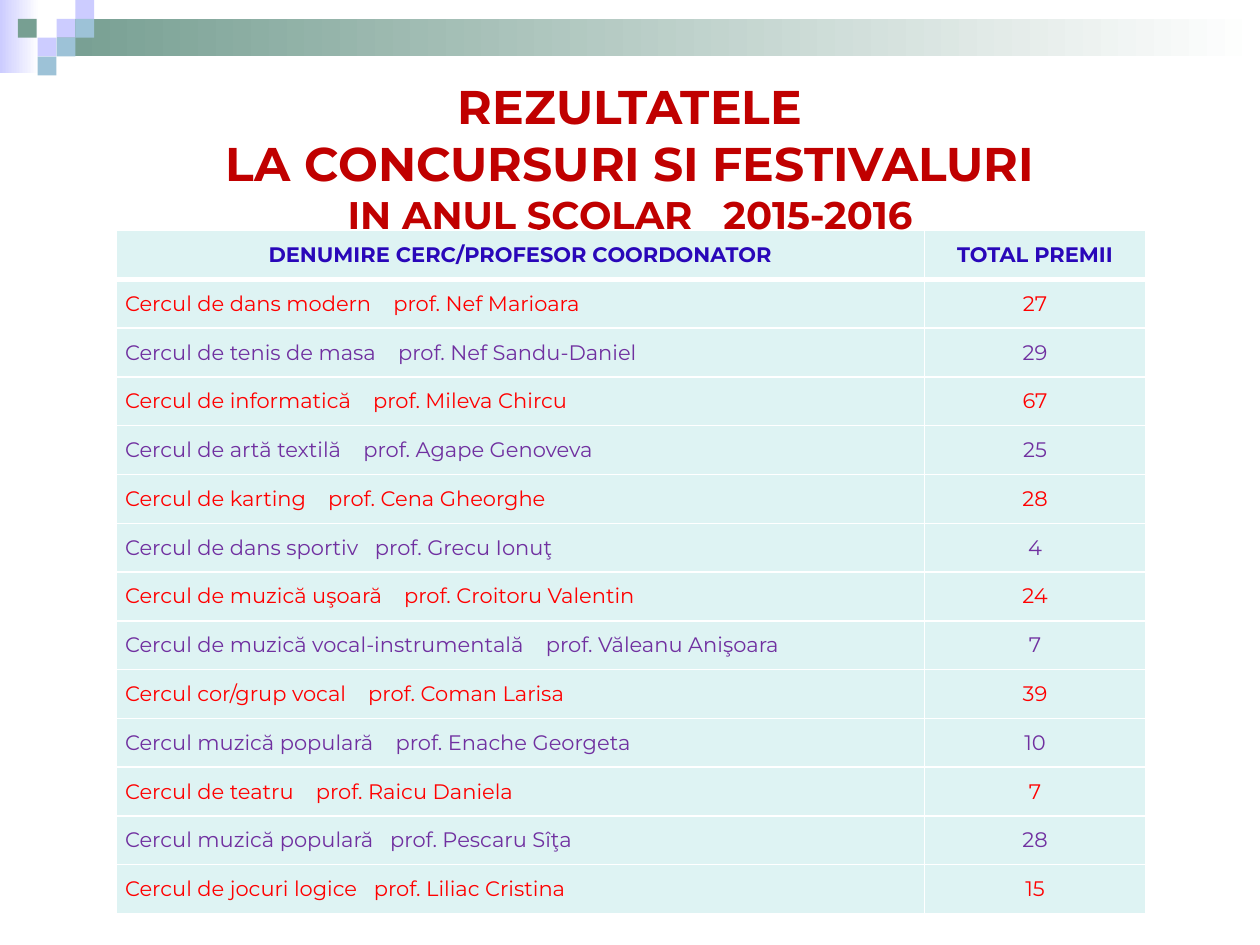
from lxml.etree import SubElement
from pptx import Presentation
from pptx.dml.color import RGBColor
from pptx.enum.shapes import MSO_SHAPE as Shape
from pptx.enum.text import MSO_ANCHOR as Anchor, PP_ALIGN as Align
from pptx.oxml import parse_xml
from pptx.oxml.ns import nsdecls, qn
from pptx.util import Cm, Pt

FONT = "Montserrat"
COLORS = {
    "white": "FFFFFF", "lilac": "CCCCFF", "green": "779F92", "blue": "9DC2D7",
    "title": "C00000", "header": "2907B9", "odd": "FF0000", "even": "7030A0",
    "cell": "DEF3F3",
}
UNIT = 0.38  # side of a corner square, cm
SPACE = 0.26  # width of a space, em
SQUARES = [  # column, row, colour
    (3, 1, "lilac"), (4, 0, "lilac"), (4, 1, "blue"), (2, 2, "lilac"),
    (0.95, 1, "green"), (3, 2, "blue"), (2, 3, "blue"),
]
TITLE = [  # pieces of a line, size
    (["REZULTATELE"], 27),
    (["LA CONCURSURI SI FESTIVALURI"], 27),
    (["IN ANUL ŞCOLAR", "2015-2016"], 22),
]
HEADER = ["DENUMIRE CERC/PROFESOR COORDONATOR", "TOTAL PREMII"]
ROWS = [  # circle, teacher, gap in spaces, prizes
    ("Cercul de dans modern", "Nef Marioara", 4, 27),
    ("Cercul de tenis de masa", "Nef Sandu-Daniel", 4, 29),
    ("Cercul de informatică", "Mileva Chircu", 4, 67),
    ("Cercul de artă textilă", "Agape Genoveva", 4, 25),
    ("Cercul de karting", "Cena Gheorghe", 4, 28),
    ("Cercul de dans sportiv", "Grecu Ionuţ", 3, 4),
    ("Cercul de muzică uşoară", "Croitoru Valentin", 4, 24),
    ("Cercul de muzică vocal-instrumentală", "Văleanu Anişoara", 4, 7),
    ("Cercul cor/grup vocal", "Coman Larisa", 4, 39),
    ("Cercul muzică populară", "Enache Georgeta", 4, 10),
    ("Cercul de teatru", "Raicu Daniela", 4, 7),
    ("Cercul muzică populară", "Pescaru Sîţa", 3, 28),
    ("Cercul de jocuri logice", "Liliac Cristina", 3, 15),
]


def rgb(name):
    return RGBColor.from_string(COLORS[name])


def add_text(p, text, size=12, color="title", bold=False, spacing=0):
    r = p.add_run()
    r.text = text
    r.font.name, r.font.size, r.font.bold = FONT, Pt(size), bold
    r.font.color.rgb = rgb(color)
    if spacing:
        r._r.get_or_add_rPr().set("spc", str(round(spacing * 100)))


def add_pieces(p, pieces, gap=3, size=12, **fmt):
    """Write the pieces on one line, each parted by one widened space."""
    for i, piece in enumerate(pieces):
        if i:
            add_text(p, " ", size=size, spacing=(gap - 1) * SPACE * size, **fmt)
        add_text(p, piece, size=size, **fmt)


def add_rect(s, x, y, w, h, color, fade=False):
    sp = s.shapes.add_shape(Shape.RECTANGLE, Cm(x), Cm(y), Cm(w), Cm(h))
    sp.shadow.inherit = False
    sp.line.fill.background()
    if fade:
        sp.fill.gradient()
        sp.fill.gradient_angle = 0
        for stop, name in zip(sp.fill.gradient_stops, (color, "white")):
            stop.color.rgb = rgb(name)
    else:
        sp.fill.solid()
        sp.fill.fore_color.rgb = rgb(color)


def add_corner(s):
    add_rect(s, 0, 0, 0.79, 1.47, "lilac", fade=True)
    add_rect(s, 3 * UNIT, UNIT, 25.4 - 3 * UNIT, 2 * UNIT, "green", fade=True)
    for col, row, color in SQUARES:
        add_rect(s, col * UNIT, row * UNIT, UNIT, UNIT, color)


def add_title(s):
    tf = s.shapes.add_textbox(Cm(1.27), Cm(1.27), Cm(22.86), Cm(3.81)).text_frame
    tf.word_wrap = True
    tf.vertical_anchor = Anchor.MIDDLE
    p = tf.paragraphs[0]
    p.alignment = Align.CENTER
    for i, (pieces, size) in enumerate(TITLE):
        if i:
            p.add_line_break()
        add_pieces(p, pieces, size=size, bold=True)


def set_borders(cell, **widths):
    """Draw white borders; widths in points by side L, R, T, B."""
    tcPr = cell._tc.get_or_add_tcPr()
    for i, (side, width) in enumerate(widths.items()):
        ln = parse_xml(f'<a:ln{side} {nsdecls("a")} w="{Pt(width)}"/>')
        fill = SubElement(ln, qn("a:solidFill"))
        SubElement(fill, qn("a:srgbClr"), val=COLORS["white"])
        tcPr.insert(i, ln)


def fill_cell(table, row, col, pieces, align, gap=3, **fmt):
    cell = table.cell(row, col)
    cell.fill.solid()
    cell.fill.fore_color.rgb = rgb("cell")
    cell.vertical_anchor = Anchor.MIDDLE
    cell.margin_left = cell.margin_right = Cm(0.18 if row else 0.3)
    cell.margin_top = cell.margin_bottom = 0
    set_borders(cell, L=1, R=1, T=3 if row == 1 else 1, B=1 if row else 3)
    p = cell.text_frame.paragraphs[0]
    p.alignment = align
    add_pieces(p, pieces, gap, **fmt)


def add_results(s):
    table = s.shapes.add_table(len(ROWS) + 1, 2, Cm(2.34), Cm(4.65),
                               Cm(20.75), Cm(13.77)).table
    for column, width in zip(table.columns, (16.3, 4.45)):
        column.width = Cm(width)
    for col, text in enumerate(HEADER):
        fill_cell(table, 0, col, [text], Align.CENTER, color="header", bold=True)
    for row, (circle, teacher, gap, prizes) in enumerate(ROWS, start=1):
        color = "odd" if row % 2 else "even"
        fill_cell(table, row, 0, [circle, f"prof. {teacher}"], Align.LEFT, gap,
                  color=color)
        fill_cell(table, row, 1, [str(prizes)], Align.CENTER, color=color)


def main():
    prs = Presentation()
    prs.slide_width, prs.slide_height = Cm(25.4), Cm(19.05)
    s = prs.slides.add_slide(prs.slide_layouts[6])
    add_corner(s)
    add_title(s)
    add_results(s)
    prs.save("out.pptx")


if __name__ == "__main__":
    main()
